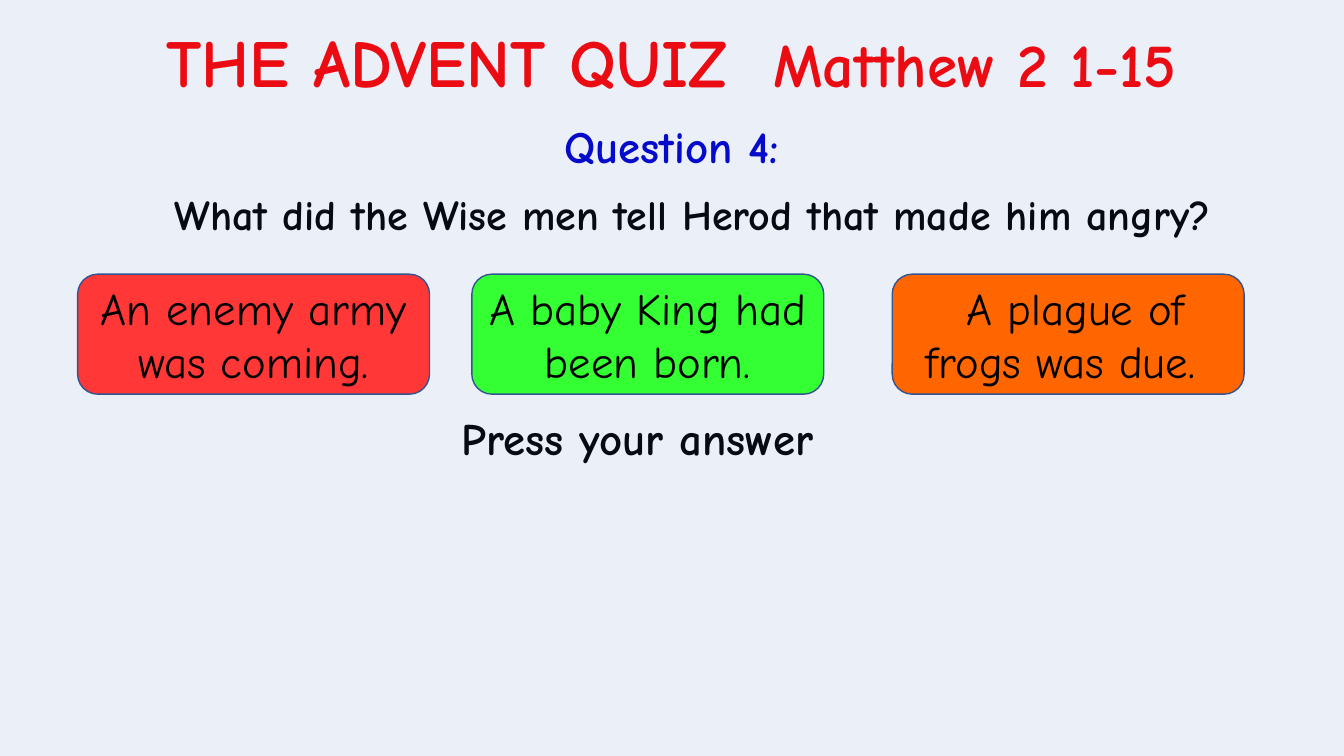
from pptx import Presentation
from pptx import util as u
from pptx.dml.color import RGBColor
from pptx.enum import shapes, text
from pptx.oxml.ns import qn
from lxml import etree

THEME = {
    "font": "Comic Neue",
    "title": "FF0000", "label": "0000CC", "ink": "000000",
    "tint": "4472C4", "outline": "325491",
    "red": "FF3737", "green": "33FF33", "orange": "FF6600",
    "title_size": 48, "verse_size": 44, "body_size": 32, "question_size": 30,
}
CENTER, LEFT = text.PP_ALIGN.CENTER, text.PP_ALIGN.LEFT

deck = Presentation()
deck.slide_width, deck.slide_height = u.Inches(13.33), u.Inches(7.5)
page = deck.slides.add_slide(deck.slide_layouts[6])


def share(left, top, width, height):
    across, down = deck.slide_width / 100, deck.slide_height / 100
    return [round(n) for n in (left * across, top * down, width * across, height * down)]


def write(box, spans, color, bold, spacing):
    para = box.text_frame.paragraphs[0]
    for name, value in spacing.items():
        setattr(para, name, value)
    for words, size in spans:
        span = para.add_run()
        span.text = words
        look = {"name": THEME["font"], "size": u.Pt(THEME[size]), "bold": bold}
        for name, value in look.items():
            setattr(span.font, name, value)
        span.font.color.rgb = RGBColor.from_string(THEME[color])


lines = [
    ((2.78, 2, 94.37, 12.13), [("THE ADVENT QUIZ ", "title_size"), (" Matthew 2 1-15", "verse_size")],
     "title", False, {"alignment": CENTER}),
    ((33.61, 54.53, 50.49, 9.6), [("Press your answer", "body_size")],
     "ink", True, {"alignment": LEFT, "line_spacing": 0.9, "space_before": u.Pt(7.5)}),
    ((33.46, 15.07, 33.08, 8.53), [("Question 4:", "body_size")],
     "label", True, {"alignment": CENTER}),
    ((5.4, 23.6, 92.35, 15.87),
     [("What did the Wise men tell Herod that made him angry?", "question_size")],
     "ink", True, {"alignment": CENTER, "line_spacing": u.Pt(40), "space_before": u.Pt(10)}),
]
for area, spans, color, wrap, spacing in lines:
    box = page.shapes.add_textbox(*share(*area))
    box.text_frame.word_wrap = wrap
    write(box, spans, color, True, spacing)

veil = page.shapes.add_shape(shapes.MSO_SHAPE.RECTANGLE, *share(0, 0, 100, 100))
veil.shadow.inherit = False
veil.fill.solid()
veil.fill.fore_color.rgb = RGBColor.from_string(THEME["tint"])
veil.line.fill.background()
tint = veil.fill._xPr.find(qn("a:solidFill"))[0]
etree.SubElement(tint, qn("a:alpha")).set("val", "10000")

answers = [
    (5.78, "red", "An enemy army was coming."),
    (35.11, "green", "A baby King had been born."),
    (66.39, "orange", " A plague of frogs was due. "),
]
for left, color, words in answers:
    card = page.shapes.add_shape(shapes.MSO_SHAPE.ROUNDED_RECTANGLE, *share(left, 36.27, 26.18, 15.87))
    card.shadow.inherit = False
    card.fill.solid()
    card.fill.fore_color.rgb = RGBColor.from_string(THEME[color])
    card.line.color.rgb = RGBColor.from_string(THEME["outline"])
    card.line.width = u.Pt(1)
    card.text_frame.word_wrap = True
    card.text_frame.vertical_anchor = text.MSO_ANCHOR.MIDDLE
    write(card, [(words, "body_size")], "ink", False, {"alignment": CENTER})

deck.save("out.pptx")
